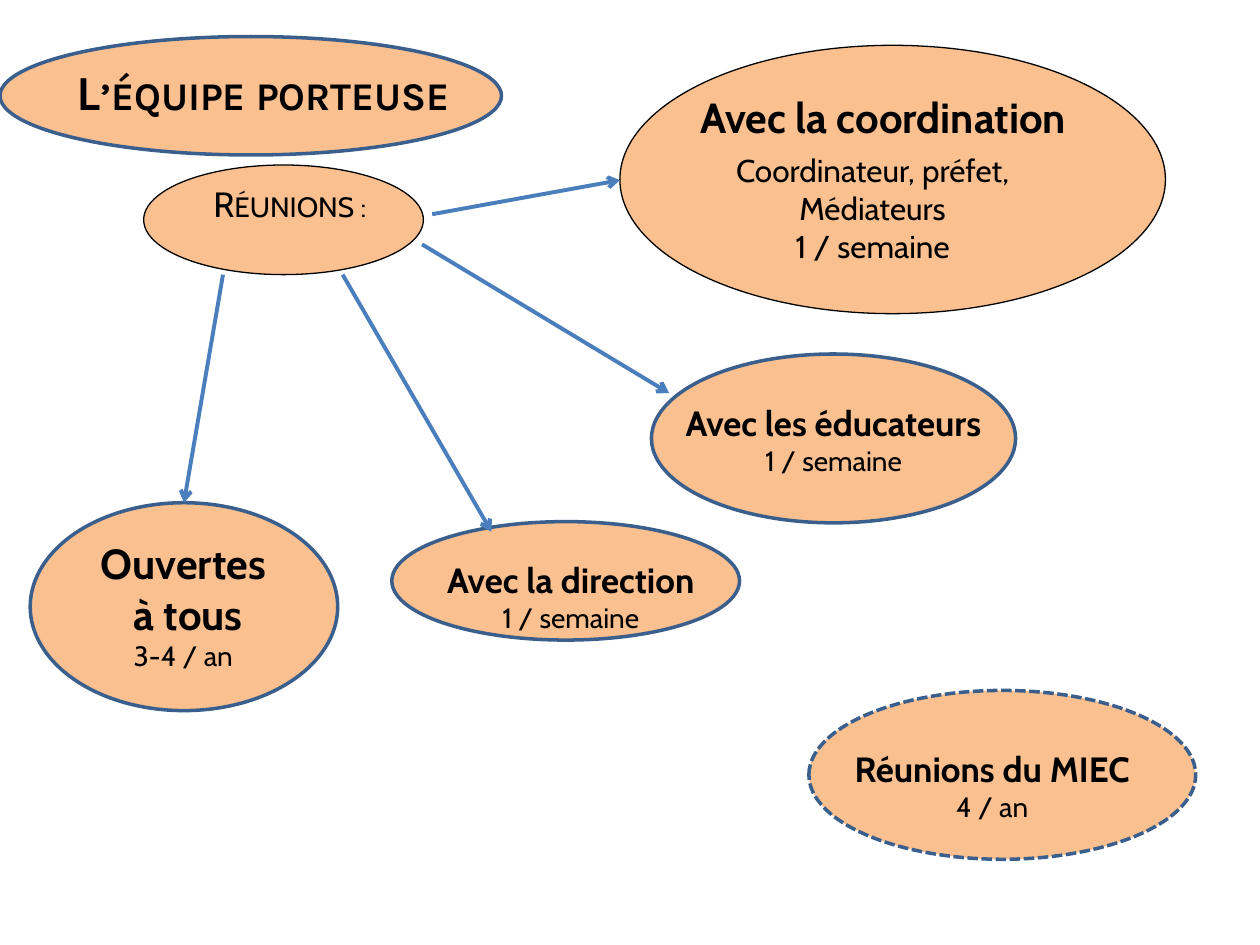
from dataclasses import dataclass
from typing import Optional

import pptx
import pptx.dml.color
import pptx.enum.dml
import pptx.enum.shapes
import pptx.enum.text
import pptx.oxml.ns
import pptx.util
from lxml import etree
from pptx.util import Inches

RGBColor = pptx.dml.color.RGBColor
PEACH = RGBColor(0xFA, 0xC0, 0x90)
NAVY = RGBColor(0x3A, 0x5F, 0x8C)
BLUE = RGBColor(0x4B, 0x7E, 0xBC)
BLACK = RGBColor(0, 0, 0)


@dataclass(frozen=True)
class Box:
    left: float
    top: float
    width: float
    height: float

    def lengths(self) -> tuple:
        return tuple(map(Inches, (self.left, self.top, self.width, self.height)))


@dataclass(frozen=True)
class Line:
    text: str
    size: int
    bold: bool = False
    small_caps: bool = False


@dataclass(frozen=True)
class Label:
    box: Box
    lines: tuple[Line, ...]
    wrap: bool = True


@dataclass(frozen=True)
class Bubble:
    box: Box
    labels: tuple[Label, ...] = ()
    outline: RGBColor = NAVY
    weight: float = 2
    dashed: bool = False


@dataclass(frozen=True)
class Arrow:
    start: tuple[float, float]
    end: tuple[float, float]
    top_of: Optional[str] = None


def meeting(heading: str, frequency: str) -> tuple[Line, ...]:
    return Line(heading, 20, bold=True), Line(frequency, 16)


BUBBLES = {
    "educators": Bubble(
        Box(5.17, 2.81, 2.89, 1.34),
        (Label(Box(4.92, 3.14, 3.39, 0.71), meeting("Avec les éducateurs", "1 / semaine")),)),
    "open": Bubble(
        Box(0.24, 3.99, 2.44, 1.65),
        (Label(Box(0, 4.22, 2.91, 1.18),
               (Line("Ouvertes", 24, bold=True), Line(" à tous", 24, bold=True),
                Line("3-4 / an", 16))),)),
    "meetings": Bubble(
        Box(1.14, 1.31, 2.22, 0.87),
        (Label(Box(1.19, 1.4, 2.27, 0.44), (Line("Réunions : ", 20, small_caps=True),)),),
        outline=BLACK, weight=0.75),
    "coordination": Bubble(
        Box(4.92, 0.36, 4.33, 2.13),
        (Label(Box(5.08, 0.68, 3.86, 0.5), (Line("Avec la coordination", 24, bold=True),)),
         Label(Box(5.47, 1.15, 2.91, 1.01),
               (Line("Coordinateur, préfet,", 18), Line("Médiateurs", 18),
                Line("1 / semaine", 18)))),
        outline=BLACK, weight=0.75),
    "management": Bubble(
        Box(3.11, 4.14, 2.76, 0.94),
        (Label(Box(3.31, 4.38, 2.44, 0.71), meeting("Avec la direction", "1 / semaine"),
               wrap=False),)),
    "MIEC": Bubble(
        Box(6.42, 5.48, 3.07, 1.34),
        (Label(Box(6.42, 5.88, 2.91, 0.71), meeting("Réunions du MIEC", "4 / an")),),
        dashed=True),
}
ARROWS = (
    Arrow((1.77, 2.18), (1.46, 3.99), top_of="open"),
    Arrow((2.72, 2.18), (3.9, 4.22)),
    Arrow((3.35, 1.94), (5.31, 3.12)),
    Arrow((3.43, 1.7), (4.92, 1.43)),
)
TITLE_BUBBLE = Bubble(Box(0, 0.29, 3.98, 0.94))
TITLE_BOX = Box(0.28, 0.44, 3.62, 0.57)


def write(paragraph, text: str, *, size: int, font: str = "Cabin",
          bold: bool = False, small_caps: bool = False) -> None:
    paragraph.alignment = pptx.enum.text.PP_ALIGN.CENTER
    run = paragraph.add_run()
    run.text = text
    run.font.name = font
    run.font.size = pptx.util.Pt(size)
    run.font.bold = bold
    run.font.color.rgb = BLACK
    if small_caps:
        run.font._element.set("cap", "small")


def draw_label(slide, label: Label) -> None:
    frame = slide.shapes.add_textbox(*label.box.lengths()).text_frame
    frame.word_wrap = label.wrap
    frame.auto_size = pptx.enum.text.MSO_AUTO_SIZE.SHAPE_TO_FIT_TEXT
    for index, line in enumerate(label.lines):
        paragraph = frame.add_paragraph() if index else frame.paragraphs[0]
        write(paragraph, line.text, size=line.size, bold=line.bold, small_caps=line.small_caps)


def draw_bubble(slide, bubble: Bubble):
    shape = slide.shapes.add_shape(pptx.enum.shapes.MSO_SHAPE.OVAL, *bubble.box.lengths())
    shape.shadow.inherit = False
    shape.fill.solid()
    shape.fill.fore_color.rgb = PEACH
    shape.line.color.rgb = bubble.outline
    shape.line.width = pptx.util.Pt(bubble.weight)
    if bubble.dashed:
        shape.line.dash_style = pptx.enum.dml.MSO_LINE.SQUARE_DOT
        shape.line._get_or_add_ln().prstDash.set("val", "sysDash")
    for label in bubble.labels:
        draw_label(slide, label)
    return shape


def draw_arrow(slide, arrow: Arrow, ovals: dict) -> None:
    connector = slide.shapes.add_connector(
        pptx.enum.shapes.MSO_CONNECTOR.STRAIGHT, *map(Inches, arrow.start + arrow.end))
    if arrow.top_of:
        connector.end_connect(ovals[arrow.top_of], 0)
    connector.line.color.rgb = BLUE
    connector.line.width = pptx.util.Pt(2.25)
    qualified = pptx.oxml.ns.qn
    etree.SubElement(connector.line._get_or_add_ln(), qualified("a:tailEnd"), type="arrow")
    etree.SubElement(connector._element.spPr, qualified("a:effectLst"))


def draw_title(slide) -> None:
    draw_bubble(slide, TITLE_BUBBLE)
    title = slide.shapes.title
    title.left, title.top, title.width, title.height = TITLE_BOX.lengths()
    slide.shapes._spTree.append(title._element)
    frame = title.text_frame
    frame.word_wrap = True
    frame.auto_size = pptx.enum.text.MSO_AUTO_SIZE.NONE
    frame.vertical_anchor = pptx.enum.text.MSO_ANCHOR.TOP
    write(frame.paragraphs[0], "L’équipe porteuse", size=28, font="Karla",
          bold=True, small_caps=True)


def main() -> None:
    presentation = pptx.Presentation()
    presentation.slide_width = Inches(10)
    presentation.slide_height = Inches(7.5)
    slide = presentation.slides.add_slide(presentation.slide_layouts.get_by_name("Title Only"))
    ovals = {key: draw_bubble(slide, bubble) for key, bubble in BUBBLES.items()}
    for arrow in ARROWS:
        draw_arrow(slide, arrow, ovals)
    draw_title(slide)
    presentation.save("out.pptx")


if __name__ == "__main__":
    main()
